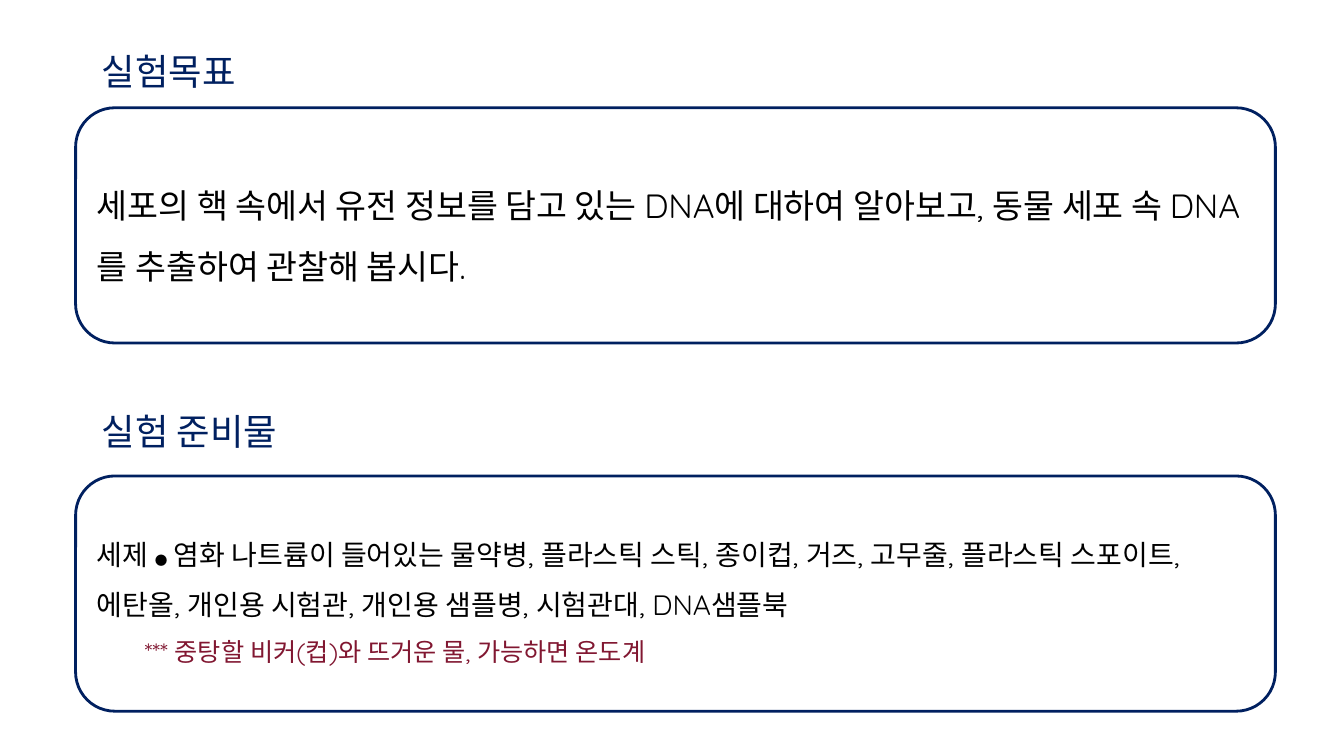
from lxml import etree
from pptx import Presentation
from pptx.dml.color import RGBColor
from pptx.enum.shapes import MSO_SHAPE as Shape
from pptx.enum.text import MSO_ANCHOR as Anchor, PP_ALIGN as Align
from pptx.oxml import parse_xml
from pptx.util import Pt

COLORS = {"navy": "002060", "white": "FFFFFF", "black": "000000", "wine": "811731"}
FONT = "Quicksand"
DRAWING_NS = "http://schemas.openxmlformats.org/drawingml/2006/main"
TEXT_SHADOW = (
    f'<a:effectLst xmlns:a="{DRAWING_NS}">'
    '<a:outerShdw blurRad="38100" dist="38100" dir="2700000" algn="tl">'
    '<a:srgbClr val="000000"><a:alpha val="43000"/></a:srgbClr>'
    "</a:outerShdw></a:effectLst>"
)


def color(name):
    return RGBColor.from_string(COLORS[name])


def add_run(paragraph, text, size, tone):
    run = paragraph.add_run()
    run.text = text
    run.font.size = Pt(size)
    run.font.name = FONT
    run.font.color.rgb = color(tone)
    return run


def add_heading(slide, left, top, width, height, text):
    heading = slide.shapes.add_textbox(Pt(left), Pt(top), Pt(width), Pt(height))
    frame = heading.text_frame
    frame.word_wrap = True
    frame.margin_left = frame.margin_right = Pt(7.2)
    frame.margin_top = frame.margin_bottom = Pt(7.2)
    words = add_run(frame.paragraphs[0], text, 26, "navy")
    fill = words.font._element.find(etree.QName(DRAWING_NS, "solidFill").text)
    fill.addnext(parse_xml(TEXT_SHADOW))


def add_panel(slide, left, top, width, height, lines):
    panel = slide.shapes.add_shape(
        Shape.ROUNDED_RECTANGLE, Pt(left), Pt(top), Pt(width), Pt(height))
    panel.shadow.inherit = False
    panel.fill.solid()
    panel.fill.fore_color.rgb = color("white")
    panel.line.color.rgb = color("navy")
    panel.line.width = Pt(2)
    frame = panel.text_frame
    frame.word_wrap = True
    frame.vertical_anchor = Anchor.MIDDLE
    for index, (indent, runs) in enumerate(lines):
        line = frame.add_paragraph() if index else frame.paragraphs[0]
        line.alignment = Align.LEFT
        line.line_spacing = 1.5
        if indent:
            line._p.get_or_add_pPr().set("marL", str(Pt(indent)))
        for text, size, tone in runs:
            add_run(line, text, size, tone)


def add_section(slide, left, top, width, height, title, title_width, title_rise, lines):
    add_heading(slide, left + 11.5, top - title_rise, title_width, 34.5, title)
    add_panel(slide, left, top, width, height, lines)


def main():
    deck = Presentation()
    deck.slide_width, deck.slide_height = Pt(960), Pt(540)
    slide = deck.slides.add_slide(deck.slide_layouts[6])

    goal = [
        (0, [("세포의 핵 속에서 유전 정보를 담고 있는 DNA에 대하여 알아보고, "
              "동물 세포 속 DNA를 추출하여 관찰해 봅시다.", 24, "black")]),
    ]
    supplies = [
        (0, [("세제 ", 20, "black"),
             ("●", 9, "black"),
             (" 염화 나트륨이 들어있는 물약병, 플라스틱 스틱, 종이컵, 거즈, 고무줄, "
              "플라스틱 스포이트, 에탄올, 개인용 시험관, 개인용 샘플병, 시험관대, "
              "DNA샘플북", 20, "black")]),
        (34, [("*** 중탕할 비커(컵)와 뜨거운 물, 가능하면 온도계", 18, "wine")]),
    ]
    add_section(slide, 54, 77, 857, 168, "실험목표", 141, 49, goal)
    add_section(slide, 54, 340, 857, 168, "실험 준비물", 166, 55, supplies)
    deck.save("out.pptx")


if __name__ == "__main__":
    main()
